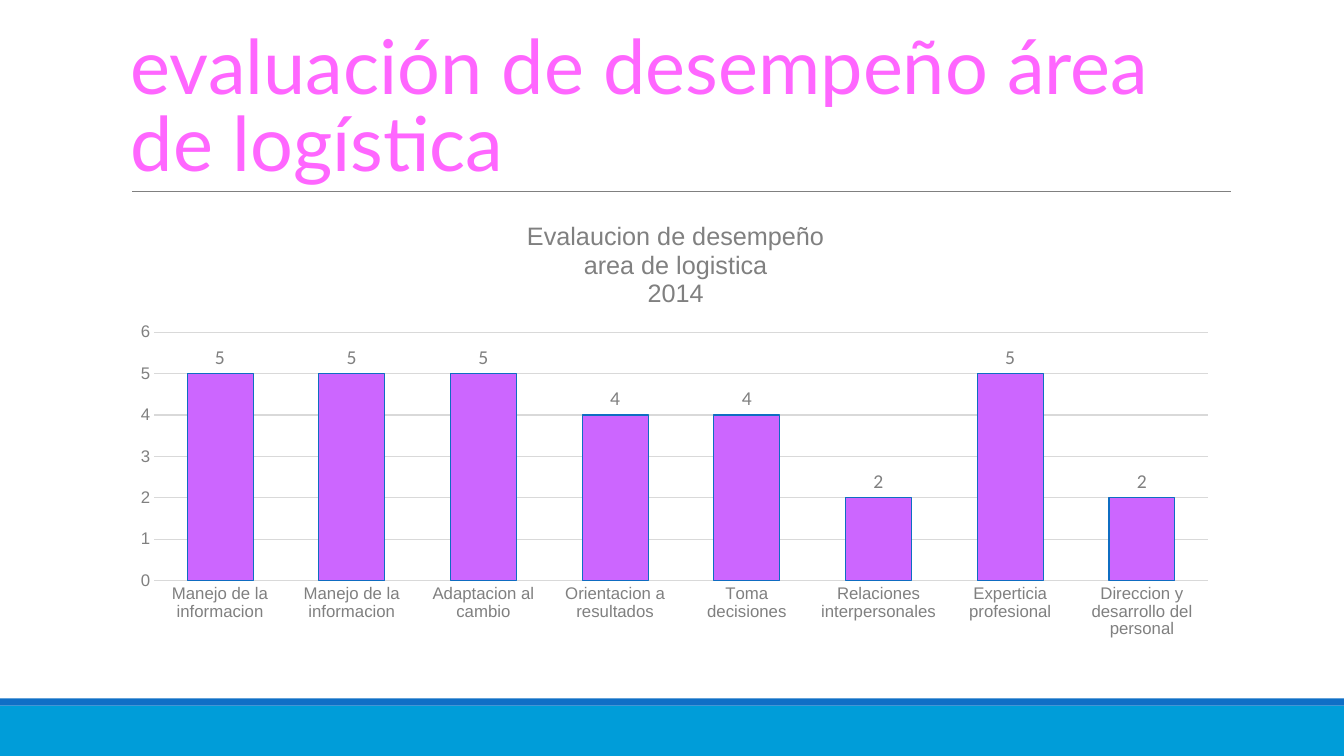
from pptx import Presentation
from pptx.chart.data import CategoryChartData
from pptx.dml.color import RGBColor
from pptx.enum.chart import XL_CHART_TYPE, XL_LABEL_POSITION, XL_TICK_MARK
from pptx.enum.shapes import MSO_CONNECTOR, MSO_SHAPE
from pptx.enum.text import MSO_ANCHOR
from pptx.oxml import parse_xml
from pptx.oxml.ns import nsdecls, qn
from pptx.util import Inches, Pt
from lxml.etree import SubElement

WIDTH, HEIGHT = 13.33, 7.5
LEFT, CONTENT_WIDTH = 1.2, 11
GRAY, GRID_GRAY = "808080", "D9D9D9"
SCORES = [
    ("Manejo de la informacion", 5),
    ("Manejo de la informacion", 5),
    ("Adaptacion al cambio", 5),
    ("Orientacion a resultados", 4),
    ("Toma decisiones", 4),
    ("Relaciones interpersonales", 2),
    ("Experticia profesional", 5),
    ("Direccion y desarrollo del personal", 2),
]


def rgb(value):
    """Turn a hex string into a colour."""
    return RGBColor.from_string(value)


def style_font(font, name, size, color):
    """Set the face, size and colour of a font."""
    font.name, font.size = name, Pt(size)
    font.color.rgb = rgb(color)


def style_line(line, color, width):
    """Set the colour and width of a line."""
    line.color.rgb = rgb(color)
    line.width = Pt(width)


def add_band(s, top, height, color):
    """Add a plain band across the whole slide."""
    sp = s.shapes.add_shape(MSO_SHAPE.RECTANGLE, 0, Inches(top),
                            Inches(WIDTH), Inches(height))
    sp.shadow.inherit = False
    sp.fill.solid()
    sp.fill.fore_color.rgb = rgb(color)
    sp.line.fill.background()


def add_rule(s, left, right, y):
    """Add a thin horizontal rule."""
    line = s.shapes.add_connector(MSO_CONNECTOR.STRAIGHT, Inches(left),
                                  Inches(y), Inches(right), Inches(y))
    style_line(line.line, GRAY, 0.5)
    SubElement(line._element.spPr, qn("a:effectLst"))


def add_title(s, text):
    """Add the slide title, resting on the rule."""
    box = s.shapes.add_textbox(Inches(LEFT), Inches(0.31),
                               Inches(CONTENT_WIDTH), Inches(1.59))
    tf = box.text_frame
    tf.word_wrap = True
    tf.vertical_anchor = MSO_ANCHOR.BOTTOM
    tf.text = text
    p = tf.paragraphs[0]
    p.line_spacing = 0.85
    style_font(p.runs[0].font, "Lato", 54, "FF66FF")


def style_axis(axis):
    """Give an axis gray labels and no tick marks."""
    axis.major_tick_mark = axis.minor_tick_mark = XL_TICK_MARK.NONE
    style_font(axis.tick_labels.font, "Arial", 12, GRAY)


def place_plot(chart, **shares):
    """Fix the inner plot area as shares of the chart's size."""
    sides = "".join(f'<c:{k} val="{v}"/>' for k, v in shares.items())
    chart._chartSpace.chart.plotArea.insert(0, parse_xml(
        f'<c:layout {nsdecls("c")}><c:manualLayout>'
        '<c:layoutTarget val="inner"/><c:xMode val="edge"/>'
        f'<c:yMode val="edge"/>{sides}</c:manualLayout></c:layout>'))


def add_score_chart(s, title, scores):
    """Add the column chart of scores."""
    data = CategoryChartData()
    data.categories = [name for name, _ in scores]
    data.add_series("Series 1", [score for _, score in scores])
    chart = s.shapes.add_chart(
        XL_CHART_TYPE.COLUMN_CLUSTERED, Inches(LEFT), Inches(2.02),
        Inches(CONTENT_WIDTH), Inches(4.4), data).chart
    style_font(chart.font, "Calibri", 10, "000000")
    chart.has_legend = False

    chart.has_title = True
    chart.chart_title.include_in_layout = False
    tf = chart.chart_title.text_frame
    tf.text = title
    for p in tf.paragraphs:
        style_font(p.font, "Arial", 18, GRAY)
        for r in p.runs:
            style_font(r.font, "Arial", 18, GRAY)
            r.font.bold = False

    style_axis(chart.category_axis)
    style_line(chart.category_axis.format.line, GRID_GRAY, 0.75)
    axis = chart.value_axis
    style_axis(axis)
    axis.minimum_scale, axis.maximum_scale, axis.major_unit = 0, 6, 1
    axis.format.line.fill.background()
    style_line(axis.major_gridlines.format.line, GRID_GRAY, 0.75)

    plot = chart.plots[0]
    plot.gap_width, plot.overlap = 100, -24
    plot.vary_by_categories = False
    series = plot.series[0]
    series.format.fill.solid()
    series.format.fill.fore_color.rgb = rgb("CC66FF")
    style_line(series.format.line, "0F6DC2", 0.75)
    labels = series.data_labels
    labels.show_value = True
    labels.position = XL_LABEL_POSITION.OUTSIDE_END
    style_font(labels.font, "Calibri", 14, GRAY)
    place_plot(chart, x=0.03, y=0.29, w=0.95, h=0.56)


def main():
    """Build the slide and save it."""
    prs = Presentation()
    prs.slide_width, prs.slide_height = Inches(WIDTH), Inches(HEIGHT)
    s = prs.slides.add_slide(prs.slide_layouts[6])
    add_band(s, 7, 0.5, "009DD9")
    add_band(s, 6.93, 0.07, "0F6FC6")
    add_rule(s, 1.31, 12.21, 1.9)
    add_title(s, "evaluación de desempeño área de logística")
    add_score_chart(s, "Evalaucion de desempeño\narea de logistica\n2014", SCORES)
    prs.save("out.pptx")


if __name__ == "__main__":
    main()
